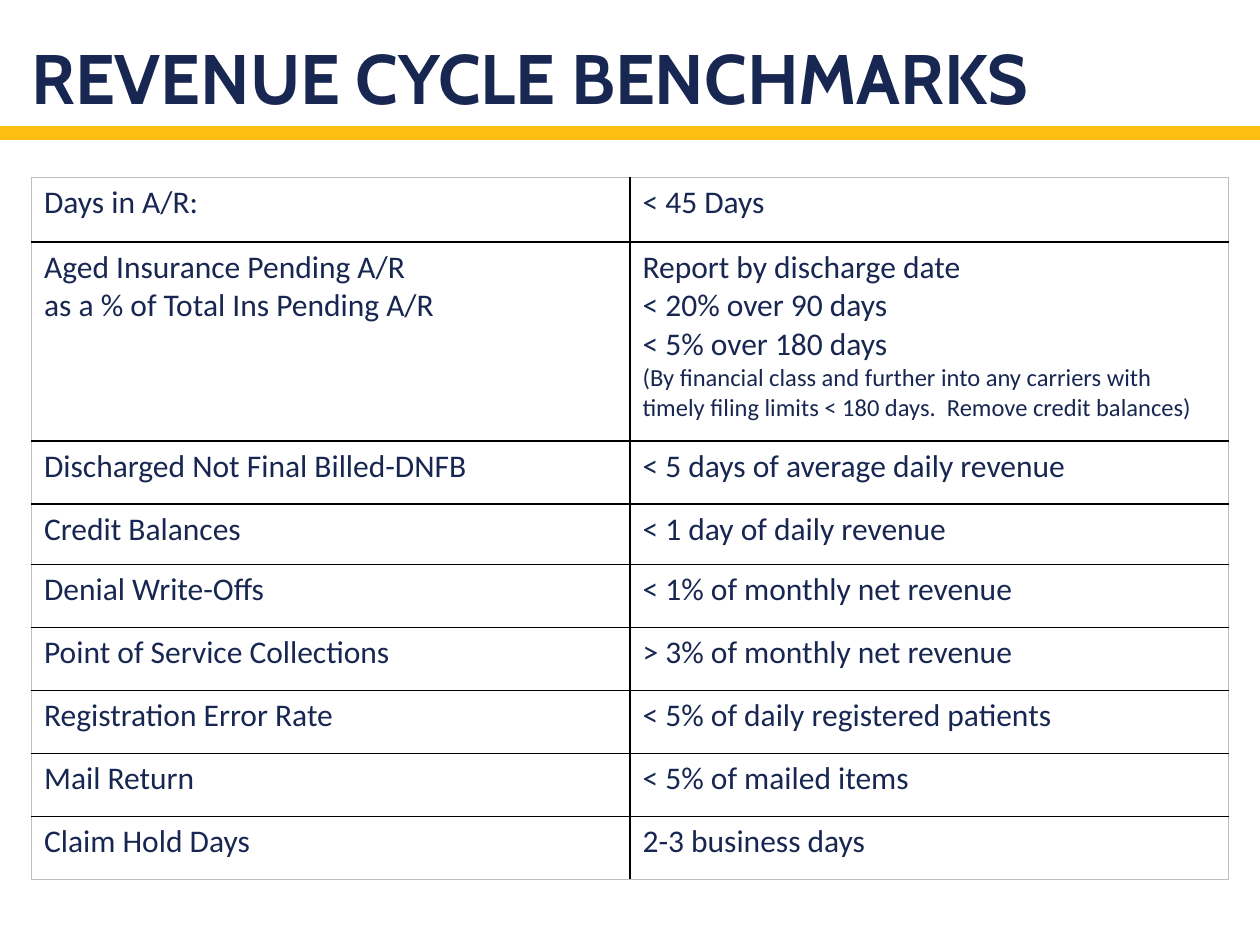
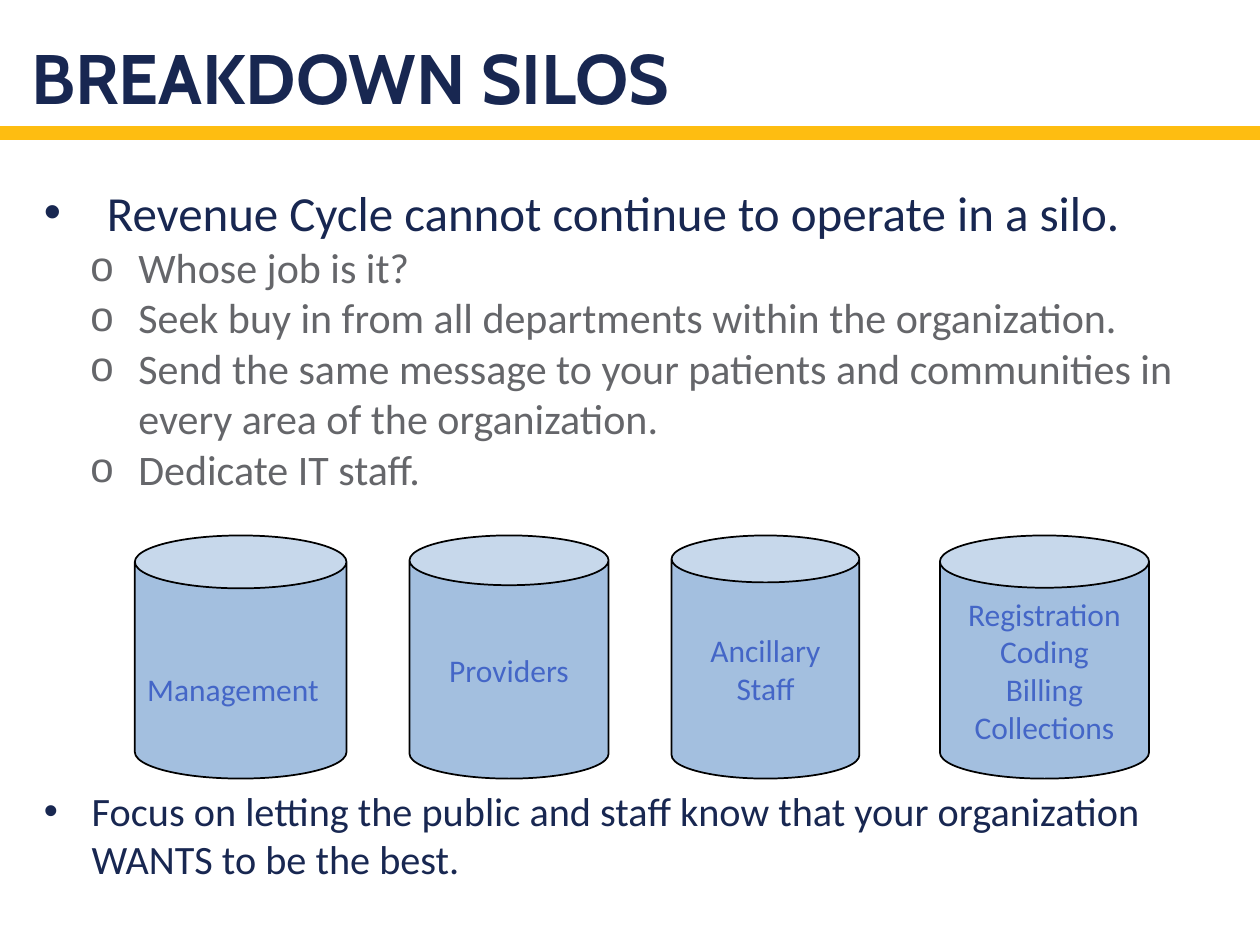
from pptx import Presentation
from pptx.dml.color import RGBColor
from pptx.enum.shapes import MSO_SHAPE as Shape
from pptx.enum.text import MSO_ANCHOR as Anchor, PP_ALIGN as Align
from pptx.oxml.ns import qn
from pptx.util import Inches, Pt
from lxml.etree import SubElement

WIDTH, HEIGHT = 10, 7.5
MARGIN = WIDTH / 40
CONTENT_WIDTH = WIDTH - 2 * MARGIN
NAVY, GOLD, GRAY = "182751", "FEBD11", "65666A"
SILO_FILL, SILO_TEXT, BLACK, EDGE = "A3BFDF", "4466C7", "000000", "BFBFBF"
BODY_FONT, TITLE_FONT = "Calibri", "Cabin"

BENCHMARKS = [
    (0.51, ["Days in A/R:"], ["< 45 Days"]),
    (1.58, ["Aged Insurance Pending A/R", "as a % of Total Ins Pending A/R"],
     ["Report by discharge date", "< 20% over 90 days", "< 5% over 180 days",
      "(By financial class and further into any carriers with "
      "timely filing limits < 180 days.  Remove credit balances)"]),
    (0.5, ["Discharged Not Final Billed-DNFB"], ["< 5 days of average daily revenue"]),
    (0.48, ["Credit Balances"], ["< 1 day of daily revenue"]),
    (0.5, ["Denial Write-Offs"], ["< 1% of monthly net revenue"]),
    (0.5, ["Point of Service Collections"], ["> 3% of monthly net revenue"]),
    (0.5, ["Registration Error Rate"], ["< 5% of daily registered patients"]),
    (0.5, ["Mail Return"], ["< 5% of mailed items"]),
    (0.5, ["Claim Hold Days"], ["2-3 business days"]),
]

LEVELS = {
    "main": ("•", 0.5, 0.5, 28, NAVY),
    "sub": ("o", 0.75, 0.38, 24, GRAY),
    "closing": ("•", 0.38, 0.38, 23, NAVY),
}
SILO_POINTS = [
    ("main", "Revenue Cycle cannot continue to operate in a silo."),
    ("sub", "Whose job is it?"),
    ("sub", "Seek buy in from all departments within the organization."),
    ("sub", "Send the same message to your patients and communities in "
            "every area of the organization."),
    ("sub", "Dedicate IT staff."),
]
CLOSING_POINTS = [
    ("closing", "Focus on letting the public and staff know that your "
                "organization WANTS to be the best."),
]
SILO_TOP, SILO_HEIGHT = 4.25, 1.93
SILOS = [
    (1.07, 1.68, ["Management"], Align.LEFT, 0.35),
    (3.25, 1.58, ["Providers"], Align.CENTER, 0.05),
    (5.33, 1.49, ["Ancillary Staff"], Align.CENTER, 0.05),
    (7.46, 1.66, ["Registration", "Coding", "Billing", "Collections"],
     Align.CENTER, 0.05),
]


def color(code):
    return RGBColor.from_string(code)


def box(left, top, width, height):
    return [Inches(round(v, 2)) for v in (left, top, width, height)]


def style(paragraph, size, code, font=BODY_FONT, bold=False):
    face = paragraph.font
    face.name, face.size, face.bold = font, Pt(size), bold
    face.color.rgb = color(code)


def write(frame, lines):
    frame.word_wrap = True
    frame.text = "\n".join(lines)
    return frame.paragraphs


def add_solid(slide, kind, area, fill, line=None):
    solid = slide.shapes.add_shape(kind, *area)
    solid.shadow.inherit = False
    solid.fill.solid()
    solid.fill.fore_color.rgb = color(fill)
    if line:
        solid.line.color.rgb = color(line)
        solid.line.width = Pt(1)
    else:
        solid.line.fill.background()
    return solid


def add_titled_slide(deck, title):
    slide = deck.slides.add_slide(deck.slide_layouts[6])
    add_solid(slide, Shape.RECTANGLE, box(0, 1, WIDTH, 0.11), GOLD)
    frame = slide.shapes.add_textbox(*box(MARGIN, 0, CONTENT_WIDTH, 1)).text_frame
    frame.margin_left = frame.margin_right = 0
    frame.vertical_anchor = Anchor.BOTTOM
    heading = write(frame, [title])[0]
    heading.line_spacing = 0.9
    style(heading, 40, NAVY, TITLE_FONT, True)
    return slide


def set_borders(cell, sides):
    properties = cell._tc.get_or_add_tcPr()
    for side, code in sides.items():
        line = SubElement(properties, qn(f"a:ln{side}"), w=str(Pt(1)))
        SubElement(SubElement(line, qn("a:solidFill")), qn("a:srgbClr"), val=code)


def add_benchmarks(slide):
    heights = [row[0] for row in BENCHMARKS]
    area = box(MARGIN, 1.41, CONTENT_WIDTH, sum(heights))
    table = slide.shapes.add_table(len(BENCHMARKS), 2, *area).table
    table.first_row = table.horz_banding = False
    last = len(BENCHMARKS) - 1
    for r, (height, *texts) in enumerate(BENCHMARKS):
        table.rows[r].height = Inches(height)
        for c, lines in enumerate(texts):
            cell = table.cell(r, c)
            set_borders(cell, {
                "L": BLACK if c else EDGE,
                "R": EDGE if c else BLACK,
                "T": BLACK if r else EDGE,
                "B": EDGE if r == last else BLACK,
            })
            cell.fill.background()
            for paragraph in write(cell.text_frame, lines):
                style(paragraph, 14 if paragraph.text.startswith("(") else 18, NAVY)


def add_points(slide, points, top, height):
    area = box(MARGIN, top, CONTENT_WIDTH, height)
    frame = slide.shapes.add_textbox(*area).text_frame
    paragraphs = write(frame, [text for _, text in points])
    for paragraph, (level, _) in zip(paragraphs, points):
        mark, indent, hanging, size, code = LEVELS[level]
        style(paragraph, size, code)
        properties = paragraph._p.get_or_add_pPr()
        properties.set("marL", str(Inches(indent)))
        properties.set("indent", str(-Inches(hanging)))
        SubElement(properties, qn("a:buFont"), typeface="Arial")
        SubElement(properties, qn("a:buChar"), char=mark)
        defaults = properties.find(qn("a:defRPr"))
        properties.append(defaults)


def add_silos(slide):
    for left, width, lines, align, inset in SILOS:
        silo = add_solid(slide, Shape.CAN, box(left, SILO_TOP, width, SILO_HEIGHT),
                         SILO_FILL, BLACK)
        frame = silo.text_frame
        frame.vertical_anchor = Anchor.MIDDLE
        frame.margin_top = Inches(inset)
        for paragraph in write(frame, lines):
            paragraph.alignment = align
            style(paragraph, 18, SILO_TEXT)


def main():
    deck = Presentation()
    deck.slide_width, deck.slide_height = Inches(WIDTH), Inches(HEIGHT)
    add_benchmarks(add_titled_slide(deck, "REVENUE CYCLE BENCHMARKS"))
    silos = add_titled_slide(deck, "BREAKDOWN SILOS")
    add_points(silos, SILO_POINTS, 1.4, 2.6)
    add_points(silos, CLOSING_POINTS, 6.19, 0.9)
    add_silos(silos)
    deck.save("out.pptx")


if __name__ == "__main__":
    main()
